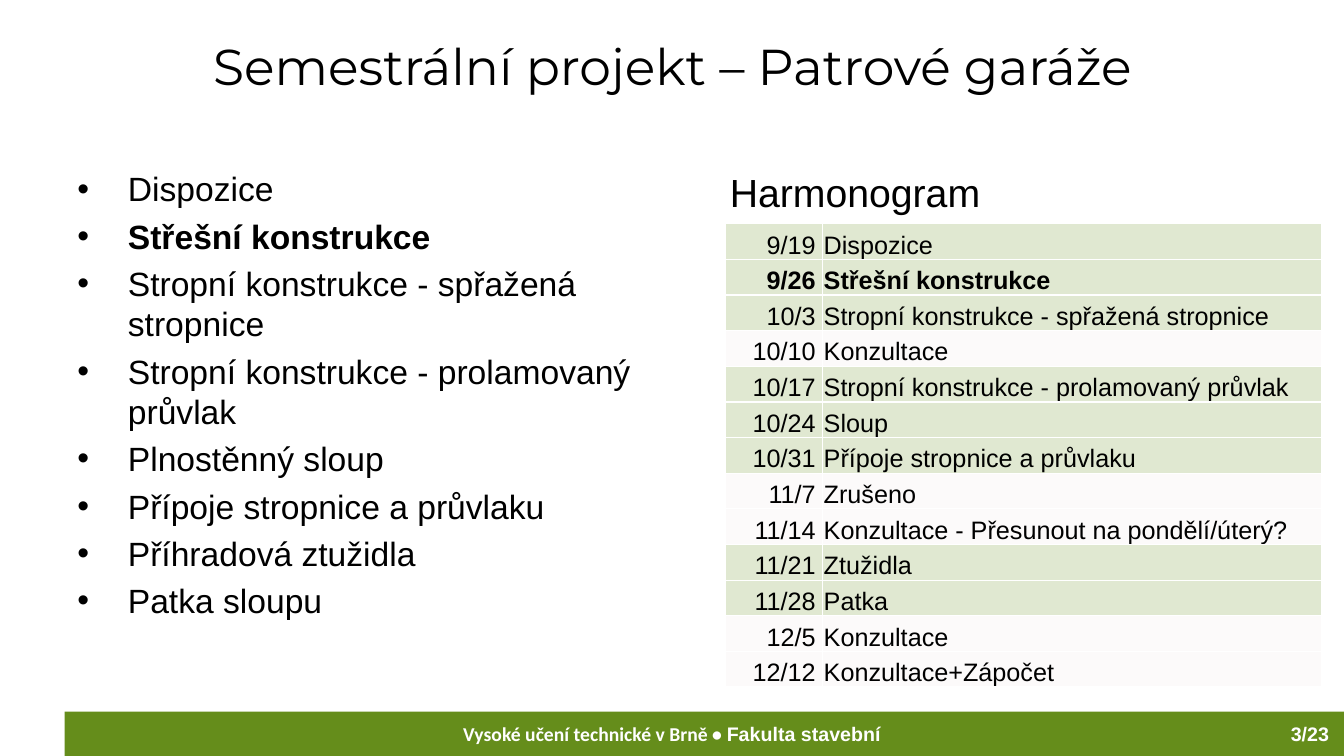
"""Build the slide about the multi-storey car park semester project."""
from dataclasses import dataclass

from lxml import etree
from pptx import Presentation
from pptx import util as u
from pptx.dml.color import RGBColor
from pptx.enum import shapes, text
from pptx.oxml import ns

PX = 9144
LEFT, CENTER, RIGHT = text.PP_ALIGN.LEFT, text.PP_ALIGN.CENTER, text.PP_ALIGN.RIGHT


@dataclass(frozen=True)
class Theme:
    """Colours, fonts and type sizes of the slide."""
    green: str = "658D1B"
    pale: str = "F4E7E7"
    white: str = "FFFFFF"
    black: str = "000000"
    fill_alpha: int = 20000
    body_font: str = "Arial"
    title_font: str = "Montserrat"
    school_font: str = "Calibri"
    title: int = 36
    heading: int = 28
    body: int = 24
    table: int = 18
    footer: int = 14


THEME = Theme()

TOPICS = [
    "Dispozice",
    "Střešní konstrukce",
    "Stropní konstrukce - spřažená stropnice",
    "Stropní konstrukce - prolamovaný průvlak",
    "Plnostěnný sloup",
    "Přípoje stropnice a průvlaku",
    "Příhradová ztužidla",
    "Patka sloupu",
]
CURRENT_TOPIC = "Střešní konstrukce"

SCHEDULE = [
    ("9/19", "Dispozice"),
    ("9/26", "Střešní konstrukce"),
    ("10/3", "Stropní konstrukce - spřažená stropnice"),
    ("10/10", "Konzultace"),
    ("10/17", "Stropní konstrukce - prolamovaný průvlak"),
    ("10/24", "Sloup"),
    ("10/31", "Přípoje stropnice a průvlaku"),
    ("11/7", "Zrušeno"),
    ("11/14", "Konzultace - Přesunout na pondělí/úterý?"),
    ("11/21", "Ztužidla"),
    ("11/28", "Patka"),
    ("12/5", "Konzultace"),
    ("12/12", "Konzultace+Zápočet"),
]


def px(*lengths):
    """Turn lengths in px into EMU."""
    return [u.Emu(length * PX) for length in lengths]


def set_font(font, size, color=THEME.black, name=THEME.body_font, bold=False):
    """Set size, colour, face and weight of a font."""
    font.size, font.name, font.bold = u.Pt(size), name, bold
    font.color.rgb = RGBColor.from_string(color)


def add_text(page, place, words, size, align=LEFT, **look):
    """Add a wrapping text box with one paragraph and return the paragraph."""
    frame = page.shapes.add_textbox(*px(*place)).text_frame
    frame.word_wrap = True
    para = frame.paragraphs[0]
    para.text, para.alignment = words, align
    set_font(para.font, size, **look)
    return para


def add_bar(page, place):
    """Add the plain footer bar."""
    bar = page.shapes.add_shape(shapes.MSO_SHAPE.RECTANGLE, *px(*place))
    bar.shadow.inherit = False
    bar.fill.solid()
    bar.fill.fore_color.rgb = RGBColor.from_string(THEME.green)
    bar.line.fill.background()


def add_footer(page):
    """Add the footer bar with the school name and the page number."""
    add_bar(page, (64, 706, 1269, 44))
    para = add_text(page, (0, 711, 1333, 34), "Vysoké učení technické v Brně • ",
                    THEME.footer, CENTER, color=THEME.white, bold=True)
    para.runs[0].font.name = THEME.school_font
    span = para.add_run()
    span.text = "Fakulta stavební"
    add_text(page, (1197, 711, 131, 34), "3/23", THEME.footer, RIGHT,
             color=THEME.white, bold=True)


def add_bullets(page, place, items):
    """Add a bulleted list with the current topic in bold."""
    frame = page.shapes.add_textbox(*px(*place)).text_frame
    frame.word_wrap = True
    for index, item in enumerate(items):
        para = frame.add_paragraph() if index else frame.paragraphs[0]
        para.text = item
        props = para._p.get_or_add_pPr()
        indent = px(50)[0]
        props.set("marL", str(indent))
        props.set("indent", str(-indent))
        etree.SubElement(props, ns.qn("a:buFont"), typeface=THEME.body_font)
        etree.SubElement(props, ns.qn("a:buChar"), char="•")
        if index:
            para.space_before = u.Pt(5)
        set_font(para.font, THEME.body, bold=item == CURRENT_TOPIC)


def add_borders(cell):
    """Draw thin white borders on all four sides of a cell."""
    props = cell._tc.get_or_add_tcPr()
    for index, side in enumerate(("lnL", "lnR", "lnT", "lnB")):
        line = etree.Element(ns.qn(f"a:{side}"), w=str(u.Pt(1)))
        fill = etree.SubElement(line, ns.qn("a:solidFill"))
        etree.SubElement(fill, ns.qn("a:srgbClr"), val=THEME.white)
        props.insert(index, line)


def fill_cell(cell, color):
    """Give a cell a translucent fill."""
    cell.fill.solid()
    cell.fill.fore_color.rgb = RGBColor.from_string(color)
    shade = cell._tc.tcPr.find(".//" + ns.qn("a:srgbClr"))
    etree.SubElement(shade, ns.qn("a:alpha"), val=str(THEME.fill_alpha))


def add_schedule(page, place, widths, rows):
    """Add the timetable, with teaching weeks in green and the others pale."""
    table = page.shapes.add_table(len(rows), len(widths), *px(*place)).table
    table.first_row = table.horz_banding = False
    for column, width in zip(table.columns, px(*widths)):
        column.width = width
    for row, entry in zip(table.rows, rows):
        topic = entry[1]
        is_free = topic.startswith(("Konzultace", "Zrušeno"))
        for cell, words, align, gap in zip(row.cells, entry, (RIGHT, LEFT), (7, 1)):
            cell.margin_left, cell.margin_top, cell.margin_right, cell.margin_bottom = px(1, 1, gap, 0)
            cell.vertical_anchor = text.MSO_ANCHOR.BOTTOM
            fill_cell(cell, THEME.pale if is_free else THEME.green)
            add_borders(cell)
            para = cell.text_frame.paragraphs[0]
            para.text, para.alignment = words, align
            set_font(para.font, THEME.table, bold=topic == CURRENT_TOPIC)


def main():
    """Build the deck and save it."""
    deck = Presentation()
    deck.slide_width, deck.slide_height = px(1333, 750)
    page = deck.slides.add_slide(deck.slide_layouts[6])
    add_footer(page)
    add_text(page, (67, 30, 1200, 109), "Semestrální projekt – Patrové garáže",
             THEME.title, CENTER, name=THEME.title_font)
    add_bullets(page, (67, 162, 592, 508), TOPICS)
    add_text(page, (714, 162, 592, 508), "Harmonogram", THEME.heading)
    add_schedule(page, (719, 222, 592, 460), (97, 495), SCHEDULE)
    deck.save("out.pptx")


if __name__ == "__main__":
    main()
